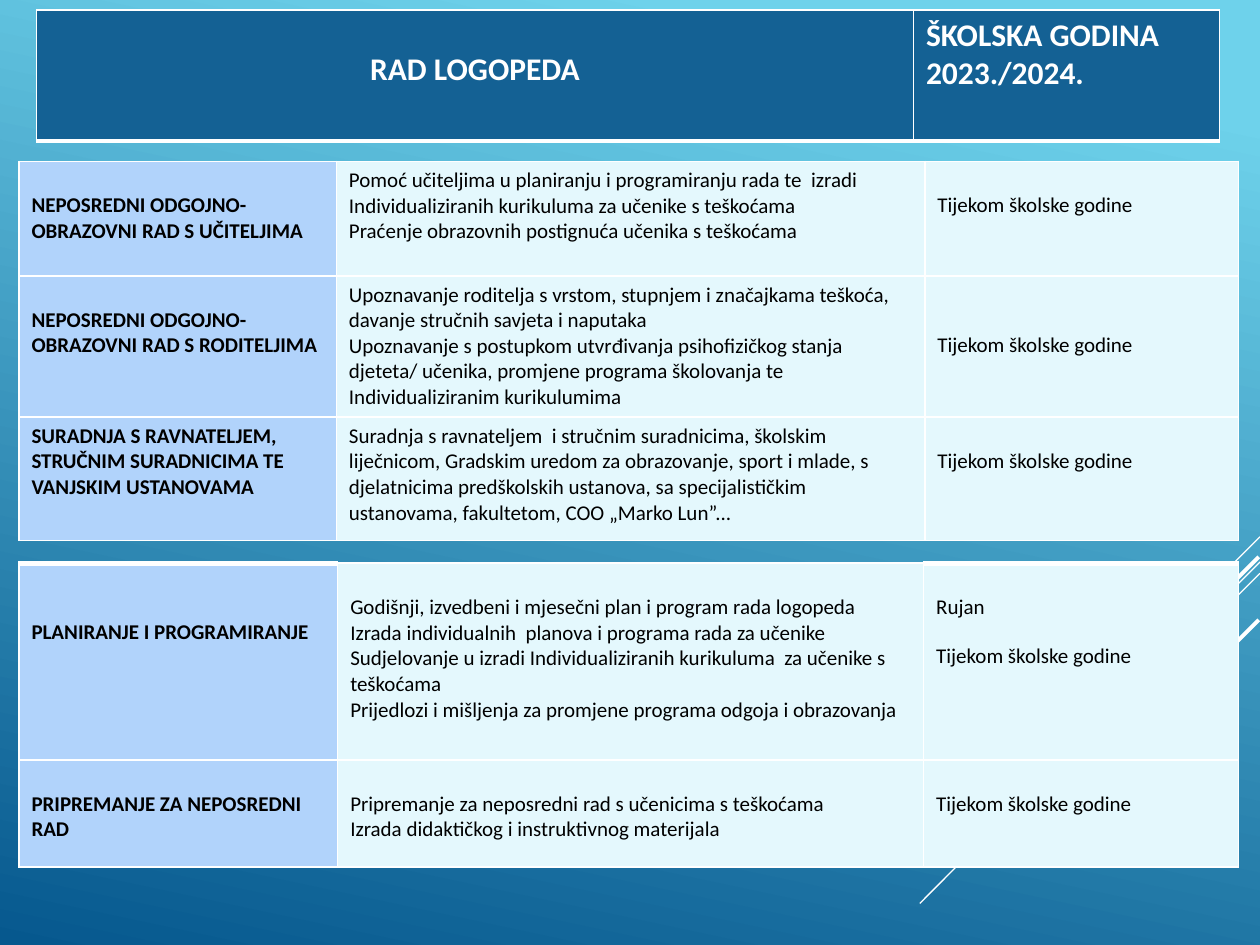
from lxml.etree import SubElement
from pptx import Presentation
from pptx.dml.color import RGBColor
from pptx.enum.shapes import MSO_CONNECTOR
from pptx.enum.text import PP_ALIGN
from pptx.oxml import parse_xml
from pptx.oxml.ns import nsdecls, qn
from pptx.util import Inches, Pt

WHITE = RGBColor(0xFF, 0xFF, 0xFF)
BLACK = RGBColor(0x00, 0x00, 0x00)
SKY = RGBColor(0x6E, 0xD2, 0xEB)
DEEP = RGBColor(0x06, 0x58, 0x8E)
NAVY = RGBColor(0x14, 0x61, 0x94)
LABEL = RGBColor(0xB1, 0xD3, 0xFB)
PALE = RGBColor(0xE4, 0xF8, 0xFD)

FONT = "Calibri"
LINE_HEIGHT = 0.2
MARGIN = 0.05
THIN, THICK = 0.96, 3
ALL_YEAR = "Tijekom školske godine"

RAYS = [
    (10, 4.26, 9.17, 5.09, 0.75),
    (10, 4.46, 7.3, 7.17, 0.75),
    (10, 4.55, 8.28, 6.27, 0.75),
    (9.99, 4.42, 8.42, 5.99, 2.25),
    (9.99, 4.92, 8.85, 6.06, 2.25),
]

COOPERATION_ROWS = [
    [
        (1, ["NEPOSREDNI ODGOJNO-OBRAZOVNI RAD S UČITELJIMA"]),
        (0, ["Pomoć učiteljima u planiranju i programiranju rada te  izradi "
             "Individualiziranih kurikuluma za učenike s teškoćama",
             "Praćenje obrazovnih postignuća učenika s teškoćama"]),
        (1, [ALL_YEAR]),
    ],
    [
        (1, ["NEPOSREDNI ODGOJNO-OBRAZOVNI RAD S RODITELJIMA"]),
        (0, ["Upoznavanje roditelja s vrstom, stupnjem i značajkama teškoća, "
             "davanje stručnih savjeta i naputaka",
             "Upoznavanje s postupkom utvrđivanja psihofizičkog stanja djeteta/ učenika, "
             "promjene programa školovanja te Individualiziranim kurikulumima"]),
        (2, [ALL_YEAR]),
    ],
    [
        (0, ["SURADNJA S RAVNATELJEM, STRUČNIM SURADNICIMA TE VANJSKIM USTANOVAMA"]),
        (0, ["Suradnja s ravnateljem  i stručnim suradnicima, školskim liječnicom, "
             "Gradskim uredom za obrazovanje, sport i mlade, s djelatnicima predškolskih "
             "ustanova, sa specijalističkim ustanovama, fakultetom, COO „Marko Lun”..."]),
        (1, [ALL_YEAR]),
    ],
]

PLANNING_ROWS = [
    [
        (2, ["PLANIRANJE I PROGRAMIRANJE"]),
        (1, ["Godišnji, izvedbeni i mjesečni plan i program rada logopeda",
             "Izrada individualnih  planova i programa rada za učenike",
             "Sudjelovanje u izradi Individualiziranih kurikuluma  za učenike s teškoćama",
             "Prijedlozi i mišljenja za promjene programa odgoja i obrazovanja"]),
        (1, ["Rujan", ALL_YEAR]),
    ],
    [
        (1, ["PRIPREMANJE ZA NEPOSREDNI RAD"]),
        (1, ["Pripremanje za neposredni rad s učenicima s teškoćama",
             "Izrada didaktičkog i instruktivnog materijala"]),
        (1, [ALL_YEAR]),
    ],
]


def paint_background(page):
    fill = page.background.fill
    fill.gradient()
    fill.gradient_angle = 258
    for stop, position, color in zip(fill.gradient_stops, (0.1, 1), (SKY, DEEP)):
        stop.position = position
        stop.color.rgb = color


def add_ray(page, x1, y1, x2, y2, width):
    ray = page.shapes.add_connector(
        MSO_CONNECTOR.STRAIGHT, Inches(x1), Inches(y1), Inches(x2), Inches(y2))
    ray.line.color.rgb = WHITE
    ray.line.width = Pt(width)
    SubElement(ray._element.spPr, qn("a:effectLst"))


def add_grid(page, left, top, columns, rows):
    frame = page.shapes.add_table(
        len(rows), len(columns), Inches(left), Inches(top),
        Inches(sum(columns)), Inches(sum(rows)))
    table = frame.table
    table.first_row = False
    table.horz_banding = False
    for column, width in zip(table.columns, columns):
        column.width = Inches(width)
    for row, height in zip(table.rows, rows):
        row.height = Inches(height)
    return table


def set_borders(cell, top=THIN, bottom=THIN):
    properties = cell._tc.get_or_add_tcPr()
    sides = (("L", THIN), ("R", THIN), ("T", top), ("B", bottom))
    for index, (side, width) in enumerate(sides):
        border = parse_xml(
            f'<a:ln{side} {nsdecls("a")} w="{Pt(width)}"><a:solidFill>'
            f'<a:srgbClr val="{WHITE}"/></a:solidFill></a:ln{side}>')
        properties.insert(index, border)


def fill_cell(cell, texts, fill, size=12, color=BLACK, bold=False,
              offset=0, align=PP_ALIGN.LEFT, gap=0):
    cell.fill.solid()
    cell.fill.fore_color.rgb = fill
    cell.margin_top = Inches(MARGIN + offset)
    box = cell.text_frame
    for index, text in enumerate(texts):
        para = box.add_paragraph() if index else box.paragraphs[0]
        para.alignment = align
        if index:
            para.space_before = Pt(gap)
        span = para.add_run()
        span.text = text
        span.font.name = FONT
        span.font.size = Pt(size)
        span.font.bold = bold
        span.font.color.rgb = color


def add_header(page):
    table = add_grid(page, 0.29, 0.08, [3.07, 3.89, 2.43], [1.04])
    table.cell(0, 0).merge(table.cell(0, 1))
    for cell in table.iter_cells():
        set_borders(cell, bottom=THICK)
    fill_cell(table.cell(0, 0), ["RAD LOGOPEDA"], NAVY, 18, WHITE, True,
              offset=0.27, align=PP_ALIGN.CENTER)
    fill_cell(table.cell(0, 2), ["ŠKOLSKA GODINA 2023./2024."], NAVY, 18, WHITE, True)


def add_plan(page, top, columns, heights, rows, thick_tops=()):
    table = add_grid(page, 0.15, top, columns, heights)
    for row_index, row in enumerate(rows):
        for column_index, (lines_down, texts) in enumerate(row):
            cell = table.cell(row_index, column_index)
            is_label = column_index == 0
            is_thick = row_index == 0 and column_index in thick_tops
            set_borders(cell, top=THICK if is_thick else THIN)
            fill_cell(cell, texts, LABEL if is_label else PALE, bold=is_label,
                      offset=lines_down * LINE_HEIGHT,
                      gap=13.5 if column_index == 2 else 0)


def main():
    deck = Presentation()
    deck.slide_width = Inches(10)
    deck.slide_height = Inches(7.5)
    page = deck.slides.add_slide(deck.slide_layouts[6])
    paint_background(page)
    for ray in RAYS:
        add_ray(page, *ray)
    add_plan(page, 1.28, [2.52, 4.67, 2.49], [0.91, 1.12, 0.98], COOPERATION_ROWS)
    add_header(page)
    add_plan(page, 4.47, [2.53, 4.65, 2.5], [1.56, 0.85], PLANNING_ROWS, thick_tops=(0, 2))
    deck.save("out.pptx")


if __name__ == "__main__":
    main()
